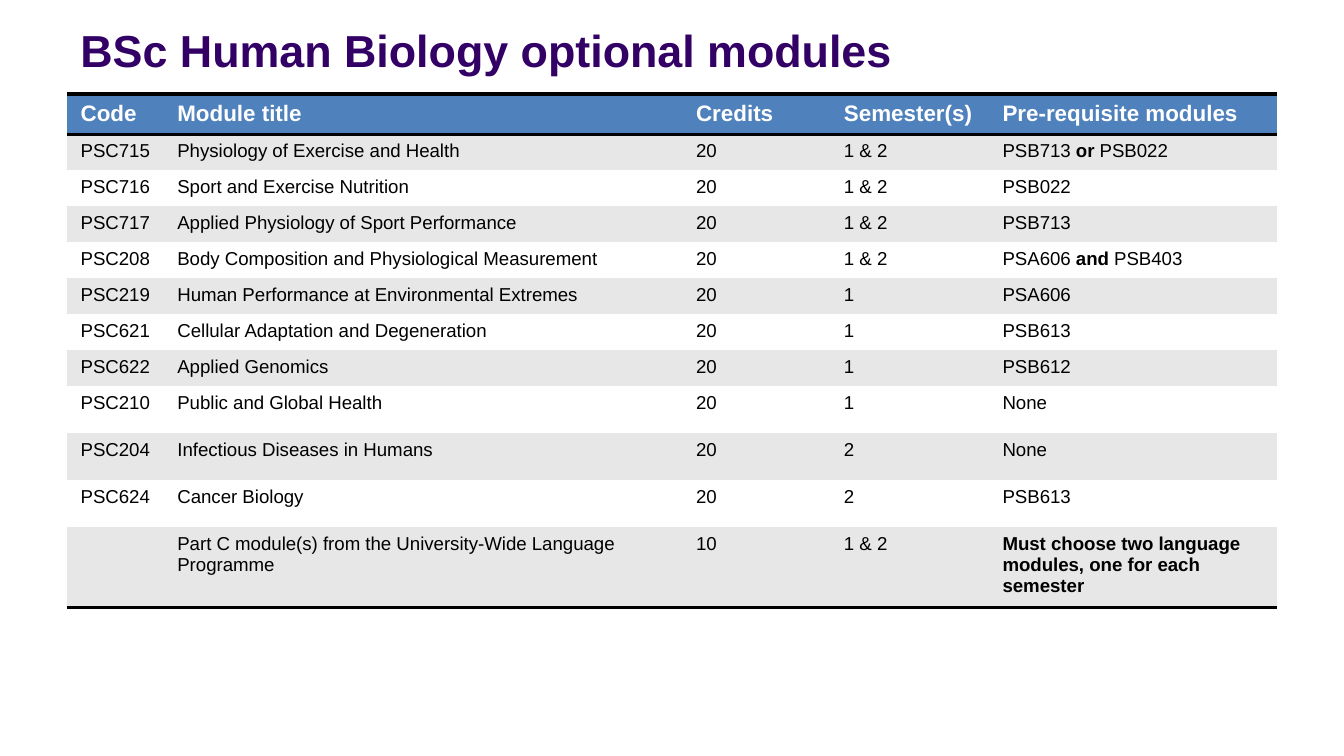
from typing import NamedTuple

from lxml.etree import SubElement
from pptx import Presentation
from pptx.dml.color import RGBColor
from pptx.enum.text import MSO_ANCHOR
from pptx.oxml.ns import qn
from pptx.util import Inches, Pt

WIDE = 10
HIGH = WIDE * 9 / 16
PLAIN_STYLE = "{2D5ABB26-0587-4C30-8999-92F81FD0307C}"
COLS = [0.72, 3.86, 1.1, 1.18, 2.14]
ROWS = [0.3] + [0.18] * 7 + [0.35] * 4
TITLE = {"size": Pt(24), "bold": True, "name": "Arial"}
HEAD = {"size": Pt(12), "bold": True, "name": "Arial"}
BODY = {"size": Pt(10), "bold": False, "name": "Arial"}


class Module(NamedTuple):
    """One table row; ** in a text switches bold on or off."""
    code: str
    title: str
    credits: str
    terms: str
    needs: str


MODULES = [
    Module("Code", "Module title", "Credits", "Semester(s)", "Pre-requisite modules"),
    Module("PSC715", "Physiology of Exercise and Health", "20", "1 & 2", "PSB713 **or** PSB022"),
    Module("PSC716", "Sport and Exercise Nutrition", "20", "1 & 2", "PSB022"),
    Module("PSC717", "Applied Physiology of Sport Performance", "20", "1 & 2", "PSB713"),
    Module("PSC208", "Body Composition and Physiological Measurement", "20", "1 & 2",
           "PSA606 **and** PSB403"),
    Module("PSC219", "Human Performance at Environmental Extremes", "20", "1", "PSA606"),
    Module("PSC621", "Cellular Adaptation and Degeneration", "20", "1", "PSB613"),
    Module("PSC622", "Applied Genomics", "20", "1", "PSB612"),
    Module("PSC210", "Public and Global Health", "20", "1", "None"),
    Module("PSC204", "Infectious Diseases in Humans", "20", "2", "None"),
    Module("PSC624", "Cancer Biology", "20", "2", "PSB613"),
    Module("", "Part C module(s) from the University-Wide Language Programme", "10", "1 & 2",
           "**Must choose two language modules, one for each semester**"),
]


def paint(target, shade: str) -> None:
    """Colour a fill or a font."""
    if hasattr(target, "solid"):
        target.solid()
        target.fore_color.rgb = RGBColor.from_string(shade)
    else:
        target.color.rgb = RGBColor.from_string(shade)


def write(para, text: str, style: dict, shade: str) -> None:
    for i, part in enumerate(text.split("**")):
        if not part:
            continue
        run = para.add_run()
        run.text = part
        for key, value in style.items():
            setattr(run.font, key, value)
        if i % 2:
            run.font.bold = True
        paint(run.font, shade)


def rule(cell, side: str) -> None:
    """Draw a black border; side is lnT or lnB."""
    line = SubElement(cell._tc.get_or_add_tcPr(), qn(f"a:{side}"), w=str(Pt(2)))
    fill = SubElement(line, qn("a:solidFill"))
    SubElement(fill, qn("a:srgbClr"), val="000000")


def add_title(slide, text: str) -> None:
    box = slide.shapes.add_textbox(Inches(0.05 * WIDE), Inches(-0.1),
                                   Inches(0.9 * WIDE), Inches(0.94))
    frame = box.text_frame
    frame.word_wrap = True
    frame.vertical_anchor = MSO_ANCHOR.MIDDLE
    write(frame.paragraphs[0], text, TITLE, "330066")


def add_grid(slide, modules: list[Module]) -> None:
    frame = slide.shapes.add_table(len(ROWS), len(COLS), Inches(0.05 * WIDE), Inches(0.7),
                                   Inches(0.9 * WIDE), Inches(sum(ROWS)))
    table = frame.table
    table._tbl.tblPr.find(qn("a:tableStyleId")).text = PLAIN_STYLE
    for col, width in zip(table.columns, COLS):
        col.width = Inches(width)
    for row, height in zip(table.rows, ROWS):
        row.height = Inches(height)
    last = len(modules) - 1
    for r, module in enumerate(modules):
        style, ink = (BODY, "000000") if r else (HEAD, "FFFFFF")
        back = ("E7E7E7" if r % 2 else "FFFFFF") if r else "4F81BD"
        sides = {0: ["lnT", "lnB"], last: ["lnB"]}.get(r, [])
        for c, text in enumerate(module):
            cell = table.cell(r, c)
            for side in sides:
                rule(cell, side)
            paint(cell.fill, back)
            write(cell.text_frame.paragraphs[0], text, style, ink)


def main() -> None:
    deck = Presentation()
    deck.slide_width, deck.slide_height = Inches(WIDE), Inches(HIGH)
    slide = deck.slides.add_slide(deck.slide_layouts[6])
    add_title(slide, "BSc Human Biology optional modules")
    add_grid(slide, MODULES)
    deck.save("out.pptx")


if __name__ == "__main__":
    main()
